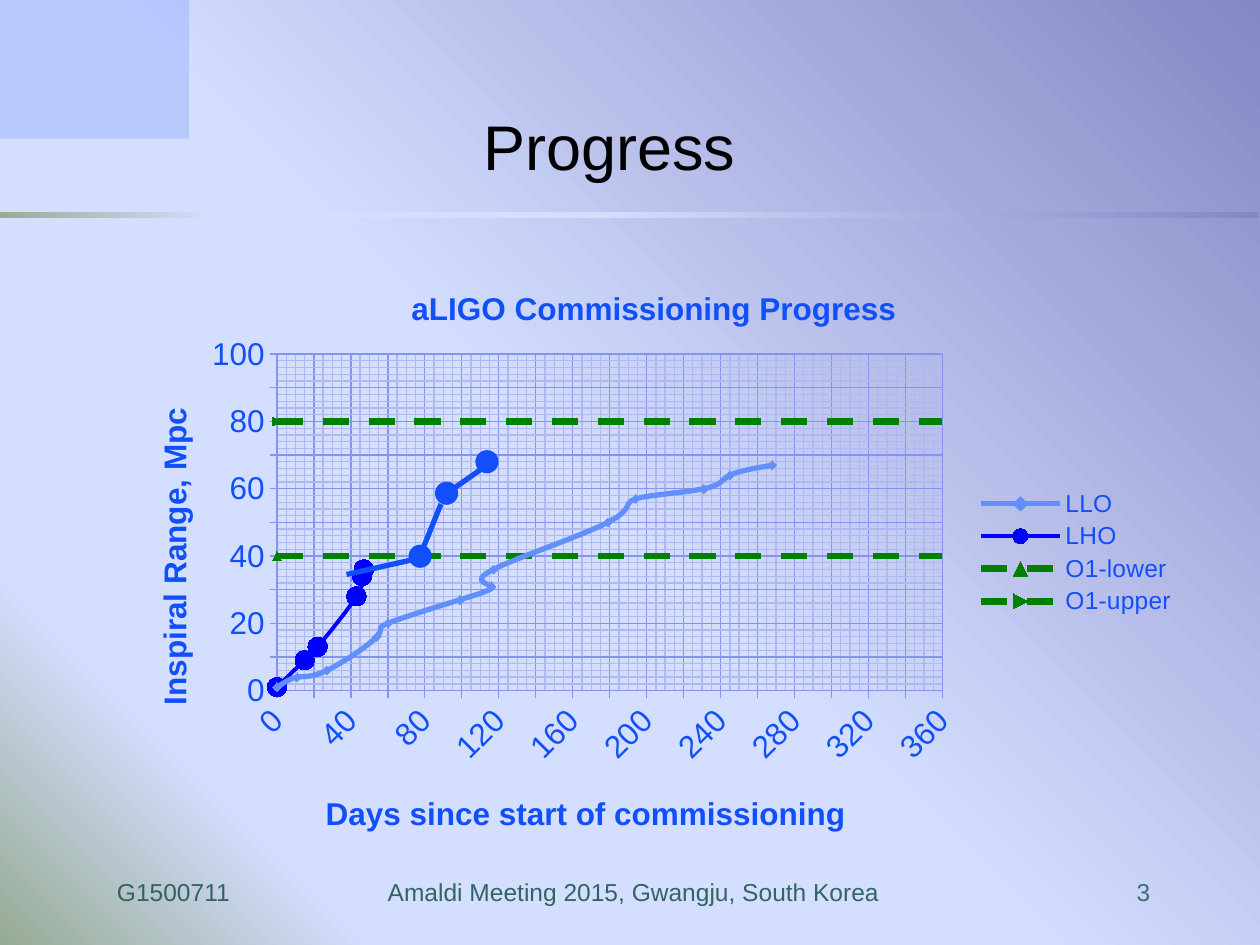
from copy import deepcopy
from dataclasses import dataclass
from typing import Optional

from lxml import etree
from pptx import Presentation
from pptx.chart.data import XyChartData
from pptx.dml.color import RGBColor
from pptx.enum.chart import XL_CHART_TYPE, XL_LEGEND_POSITION, XL_MARKER_STYLE, XL_TICK_MARK
from pptx.enum.dml import MSO_LINE
from pptx.enum.shapes import MSO_CONNECTOR, MSO_SHAPE
from pptx.enum.text import MSO_ANCHOR, PP_ALIGN
from pptx.oxml.ns import qn
from pptx.util import Inches, Pt

COLORS = {
    "blue": "114FFB", "sky": "618FFD", "navy": "0000FF", "green": "008000",
    "corner": "7095FD", "title": "000000", "footer": "326464", "page": "377373",
    "grid": "8494F0", "minor": "B0B8F2",
}
STOPS = [(0, "8488C4"), (53, "D4DEFF"), (83, "D4DEFF"), (100, "96AB94")]
FONT = "Arial"


@dataclass
class Series:
    name: str
    xs: list[float]
    ys: list[float]
    color: str
    width: float
    marker: Optional[XL_MARKER_STYLE]
    size: int
    dashed: bool = False


@dataclass
class Link:
    x1: float
    y1: float
    x2: float
    y2: float


@dataclass
class Dot:
    x: float
    y: float


SERIES = [
    Series("LLO", [0, 11, 27, 54, 60, 99, 116, 117, 179, 194, 231, 245, 268],
           [1, 4, 6, 16, 20, 27, 31, 36, 50, 57, 60, 64, 67],
           "sky", 3, XL_MARKER_STYLE.DIAMOND, 5),
    Series("LHO", [0, 15, 22, 43, 46, 47], [1, 9, 13, 28, 34, 36],
           "navy", 2.25, XL_MARKER_STYLE.CIRCLE, 11),
    Series("O1-lower", [0, 720], [40, 40], "green", 3.75, XL_MARKER_STYLE.TRIANGLE, 5, True),
    Series("O1-upper", [0, 720], [80, 80], "green", 3.75, None, 5, True),
]
RECENT = [
    Link(2.75, 4.56, 3.33, 4.43), Dot(3.25, 4.33), Dot(3.46, 3.83),
    Link(3.33, 4.42, 3.5, 4), Dot(3.78, 3.58), Link(3.54, 3.92, 3.81, 3.73),
]


def rgb(name: str) -> RGBColor:
    return RGBColor.from_string(COLORS[name])


def set_font(font, size: float, color: str, bold: bool = False) -> None:
    font.name, font.size, font.bold = FONT, Pt(size), bold
    font.color.rgb = rgb(color)


def set_gradient(fill, owner, direction: str, **attrs: str):
    fill.gradient()
    grad = owner.xpath(".//a:gradFill")[0]
    for child in list(grad):
        grad.remove(child)
    stops = etree.SubElement(grad, qn("a:gsLst"))
    for pos, color in STOPS:
        gs = etree.SubElement(stops, qn("a:gs"), pos=str(pos * 1000))
        etree.SubElement(gs, qn("a:srgbClr"), val=color)
    return etree.SubElement(grad, qn(direction), **attrs)


def add_shape(s, kind: MSO_SHAPE, x: float, y: float, w: float, h: float):
    sp = s.shapes.add_shape(kind, Inches(x), Inches(y), Inches(w), Inches(h))
    sp.shadow.inherit = False
    sp.line.fill.background()
    return sp


def add_text(s, x: float, y: float, w: float, h: float, anchor: MSO_ANCHOR):
    tf = s.shapes.add_textbox(Inches(x), Inches(y), Inches(w), Inches(h)).text_frame
    tf.word_wrap, tf.vertical_anchor = True, anchor
    return tf.paragraphs[0]


def add_link(s, link: Link) -> None:
    ends = map(Inches, (link.x1, link.y1, link.x2, link.y2))
    line = s.shapes.add_connector(MSO_CONNECTOR.STRAIGHT, *ends)
    line.line.color.rgb, line.line.width = rgb("blue"), Pt(3)
    etree.SubElement(line._element.spPr, qn("a:effectLst"))


def add_dot(s, dot: Dot) -> None:
    sp = add_shape(s, MSO_SHAPE.OVAL, dot.x, dot.y, 0.17, 0.17)
    sp.fill.solid()
    sp.fill.fore_color.rgb = sp.line.color.rgb = rgb("blue")
    sp.line.width = Pt(1)


def place(element, index: int, inner: bool = False, **sizes: float) -> None:
    for old in element.findall(qn("c:layout")):
        element.remove(old)
    layout = etree.Element(qn("c:layout"))
    manual = etree.SubElement(layout, qn("c:manualLayout"))
    if inner:
        etree.SubElement(manual, qn("c:layoutTarget"), val="inner")
    for side in ("x", "y"):
        etree.SubElement(manual, qn(f"c:{side}Mode"), val="edge")
    for key, value in sizes.items():
        etree.SubElement(manual, qn(f"c:{key}"), val=str(value))
    element.insert(index, layout)


def set_title(title, text: str, x: float, y: float, rotation: int = 0) -> None:
    tf = title.text_frame
    tf.text = text
    set_font(tf.paragraphs[0].font, 18, "blue", True)
    tf._txBody.find(qn("a:bodyPr")).set("rot", str(rotation * 60000))
    place(title._element, 1, x=x, y=y)


def set_axis(axis, top: float, major: float, minor: float, rotation: int) -> None:
    axis.minimum_scale, axis.maximum_scale = 0, top
    axis.major_unit, axis.minor_unit = major, minor
    axis.has_major_gridlines = axis.has_minor_gridlines = True
    axis.major_tick_mark, axis.minor_tick_mark = XL_TICK_MARK.OUTSIDE, XL_TICK_MARK.NONE
    for part in (axis, axis.major_gridlines):
        part.format.line.color.rgb, part.format.line.width = rgb("grid"), Pt(0.75)
    element = axis._element
    minor_style = deepcopy(element.find(qn("c:majorGridlines")).find(qn("c:spPr")))
    next(minor_style.iter(qn("a:srgbClr"))).set("val", COLORS["minor"])
    element.find(qn("c:minorGridlines")).append(minor_style)
    axis.tick_labels.number_format = "0"
    axis.tick_labels.number_format_is_linked = False
    set_font(axis.tick_labels.font, 18, "blue")
    element.find(qn("c:txPr")).find(qn("a:bodyPr")).set("rot", str(rotation * 60000))


def style_series(ser, row: Series) -> None:
    ser._element.get_or_add_smooth().val = True
    line = ser.format.line
    line.color.rgb, line.width = rgb(row.color), Pt(row.width)
    if row.dashed:
        line.dash_style = MSO_LINE.DASH
    if row.marker is not None:
        ser.marker.style = row.marker
    ser.marker.size = row.size
    fmt = ser.marker.format
    fmt.fill.solid()
    fmt.fill.fore_color.rgb = fmt.line.color.rgb = rgb(row.color)


def add_progress_chart(s) -> None:
    data = XyChartData()
    for row in SERIES:
        points = data.add_series(row.name)
        for x, y in zip(row.xs, row.ys):
            points.add_data_point(x, y)
    chart = s.shapes.add_chart(XL_CHART_TYPE.XY_SCATTER_SMOOTH, Inches(0.92), Inches(2),
                               Inches(8.52), Inches(4.77), data).chart
    set_font(chart.font, 10, "blue")
    chart.has_title = True
    set_title(chart.chart_title, "aLIGO Commissioning Progress", 0.27, 0.05)
    days, reach = chart.category_axis, chart.value_axis
    set_axis(days, 360, 20, 5, -45)
    set_axis(reach, 100, 10, 2, 0)
    set_title(days.axis_title, "Days since start of commissioning", 0.19, 0.89)
    set_title(reach.axis_title, "Inspiral Range, Mpc", 0.03, 0.25, -90)
    chart.has_legend = True
    chart.legend.position = XL_LEGEND_POSITION.RIGHT
    chart.legend.include_in_layout = False
    set_font(chart.legend.font, 14, "blue")
    plot = chart.plots[0]
    plot.vary_by_categories = False
    for ser, row in zip(plot.series, SERIES):
        style_series(ser, row)
    place(chart._chartSpace.chart.plotArea, 0, True, x=0.15, y=0.17, w=0.62, h=0.56)


def add_footer(s) -> None:
    p = add_text(s, 0.83, 6.91, 8.42, 0.34, MSO_ANCHOR.MIDDLE)
    tabs = etree.SubElement(p._p.get_or_add_pPr(), qn("a:tabLst"))
    for pos, align in ((4.1, "ctr"), (8.2, "r")):
        etree.SubElement(tabs, qn("a:tab"), pos=str(Inches(pos)), algn=align)
    runs = (("G1500711\tAmaldi Meeting 2015, Gwangju, South Korea\t", "footer"), ("3", "page"))
    for text, color in runs:
        r = p.add_run()
        r.text = text
        set_font(r.font, 14, color)


def main() -> None:
    prs = Presentation()
    prs.slide_width, prs.slide_height = Inches(10), Inches(7.5)
    s = prs.slides.add_slide(prs.slide_layouts[6])
    set_gradient(s.background.fill, s._element, "a:lin", ang=str(135 * 60000), scaled="1")
    bar = add_shape(s, MSO_SHAPE.RECTANGLE, 0, 1.69, 9.99, 0.04)
    focus = set_gradient(bar.fill, bar._element, "a:path", path="circle")
    etree.SubElement(focus, qn("a:fillToRect"), l="100000", b="100000")
    corner = add_shape(s, MSO_SHAPE.RECTANGLE, 0, 0, 1.5, 1.1)
    corner.fill.solid()
    corner.fill.fore_color.rgb = rgb("corner")
    etree.SubElement(corner._element.xpath(".//a:srgbClr")[0], qn("a:alpha"), val="28000")
    add_footer(s)
    p = add_text(s, 1.75, 0.25, 6.17, 1.25, MSO_ANCHOR.BOTTOM)
    p.text, p.alignment = "Progress", PP_ALIGN.CENTER
    set_font(p.font, 36, "title")
    add_progress_chart(s)
    for item in RECENT:
        if isinstance(item, Link):
            add_link(s, item)
        else:
            add_dot(s, item)
    prs.save("out.pptx")


if __name__ == "__main__":
    main()
